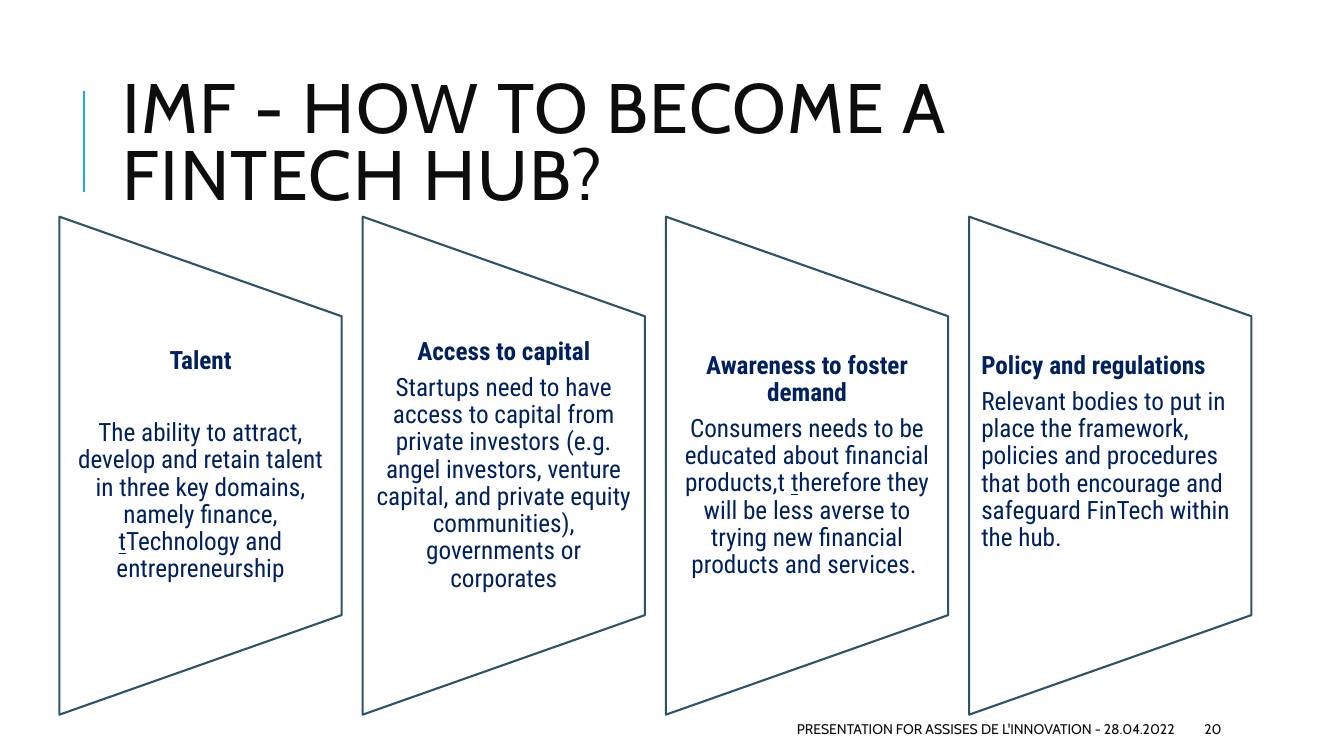
from dataclasses import dataclass

from lxml import etree
from pptx import Presentation
from pptx.dml.color import RGBColor
from pptx.enum.shapes import MSO_CONNECTOR, MSO_SHAPE
from pptx.enum.text import MSO_ANCHOR, MSO_AUTO_SIZE, PP_ALIGN
from pptx.oxml.ns import qn
from pptx.util import Pt

LEFT, CENTER, RIGHT = PP_ALIGN.LEFT, PP_ALIGN.CENTER, PP_ALIGN.RIGHT
TOP, MIDDLE = MSO_ANCHOR.TOP, MSO_ANCHOR.MIDDLE
NO_FIT = MSO_AUTO_SIZE.NONE
STRAIGHT = MSO_CONNECTOR.STRAIGHT
TRAPEZOID = MSO_SHAPE.FLOWCHART_MANUAL_OPERATION

TITLE = "IMF - HOW TO BECOME A FINTECH HUB?"
CARDS = [
    {"heading": "Talent", "gap": 32, "align": CENTER, "anchor": MIDDLE, "inset": 0,
     "body": ["The ability to attract, develop and retain talent in three key domains, namely finance, ",
              "t", "Technology and entrepreneurship"]},
    {"heading": "Access to capital", "gap": 6.3, "align": CENTER, "anchor": MIDDLE, "inset": 0,
     "body": ["Startups need to have access to capital from private investors (e.g. angel investors, "
              "venture capital, and private equity communities), governments or corporates"]},
    {"heading": "Awareness to foster demand", "gap": 6.3, "align": CENTER, "anchor": MIDDLE, "inset": 0,
     "body": ["Consumers needs to be educated about financial products,t ",
              "t", "herefore they will be less averse to trying new financial products and services. "]},
    {"heading": "Policy and regulations", "gap": 6.3, "align": LEFT, "anchor": TOP, "inset": 25.8,
     "body": ["Relevant bodies to put in place the framework, policies and procedures that both "
              "encourage and safeguard FinTech within the hub."]},
]
FOOTERS = [
    ("PRESENTATION FOR ASSISES DE L'INNOVATION - 28.04.2022", 381.6, 464.4, RIGHT),
    ("20", 853.2, 76.3, LEFT),
]


@dataclass(frozen=True)
class Theme:
    ink: RGBColor = RGBColor.from_string("0D0D0D")
    navy: RGBColor = RGBColor.from_string("002060")
    outline: RGBColor = RGBColor.from_string("2E5369")
    accent: RGBColor = RGBColor.from_string("1CADE4")
    white: RGBColor = RGBColor.from_string("FFFFFF")
    title_font: str = "Cabin"
    card_font: str = "Roboto Condensed"
    title_size: int = 50
    card_size: int = 18
    footer_size: int = 10
    line_width: float = 1.5


THEME = Theme()
CARD_LEFT, CARD_PITCH, CARD_WIDTH, CARD_HEIGHT = 42.5, 216.6, 201.6, 355.7
CARD_MIDDLE = 332.6
TEXT_HEIGHT = 213.1
SIDE_INSET = 8.64


def style(span, font, size, color, bold=False):
    span.font.name = font
    span.font.size = Pt(size)
    span.font.color.rgb = color
    span.font.bold = bold


def add_box(page, left, top, width, height, anchor):
    box = page.shapes.add_textbox(Pt(left), Pt(top), Pt(width), Pt(height))
    frame = box.text_frame
    frame.word_wrap = True
    frame.auto_size = NO_FIT
    frame.vertical_anchor = anchor
    return frame


def add_title(page):
    title = page.shapes.title
    title.left, title.top, title.width, title.height = Pt(80.6), Pt(46.1), Pt(765.4), Pt(118.1)
    frame = title.text_frame
    frame.text = TITLE
    frame.word_wrap = True
    frame.auto_size = NO_FIT
    frame.vertical_anchor = MIDDLE
    para = frame.paragraphs[0]
    para.alignment = LEFT
    para.line_spacing = 0.8
    span = para.runs[0]
    style(span, THEME.title_font, THEME.title_size, THEME.ink)
    span.font._element.set("spc", "100")
    rule = page.shapes.add_connector(STRAIGHT, Pt(60), Pt(136.8), Pt(60), Pt(64.8))
    rule.line.color.rgb = THEME.accent
    rule.line.width = Pt(THEME.line_width)
    etree.SubElement(rule._element.spPr, qn("a:effectLst"))


def add_card(page, left, card):
    center = left + CARD_WIDTH / 2
    panel = page.shapes.add_shape(
        TRAPEZOID, Pt(center - CARD_HEIGHT / 2), Pt(CARD_MIDDLE - CARD_WIDTH / 2),
        Pt(CARD_HEIGHT), Pt(CARD_WIDTH))
    panel.rotation = 270
    panel.shadow.inherit = False
    panel.fill.solid()
    panel.fill.fore_color.rgb = THEME.white
    panel.line.color.rgb = THEME.outline
    panel.line.width = Pt(THEME.line_width)

    frame = add_box(page, left, CARD_MIDDLE - TEXT_HEIGHT / 2, CARD_WIDTH, TEXT_HEIGHT, card["anchor"])
    frame.margin_left = frame.margin_right = Pt(SIDE_INSET)
    frame.margin_top, frame.margin_bottom = Pt(card["inset"]), Pt(0)
    heading, body = frame.paragraphs[0], frame.add_paragraph()
    heading.text = card["heading"]
    for text in card["body"]:
        body.add_run().text = text
    for para, gap in ((heading, card["gap"]), (body, 6.3)):
        para.alignment = card["align"]
        para.line_spacing = 0.9
        para.space_after = Pt(gap)
        for span in para.runs:
            style(span, THEME.card_font, THEME.card_size, THEME.navy, para is heading)
            span.font.underline = span.text == "t"


def add_footer(page, text, left, width, align):
    frame = add_box(page, left, 509.8, width, 21.6, MIDDLE)
    frame.text = text
    para = frame.paragraphs[0]
    para.alignment = align
    style(para.runs[0], THEME.title_font, THEME.footer_size, THEME.ink)


def main():
    deck = Presentation()
    deck.slide_width, deck.slide_height = Pt(960), Pt(540)
    page = deck.slides.add_slide(deck.slide_layouts[5])
    add_title(page)
    for index, card in enumerate(CARDS):
        add_card(page, CARD_LEFT + index * CARD_PITCH, card)
    for footer in FOOTERS:
        add_footer(page, *footer)
    deck.save("out.pptx")


if __name__ == "__main__":
    main()
